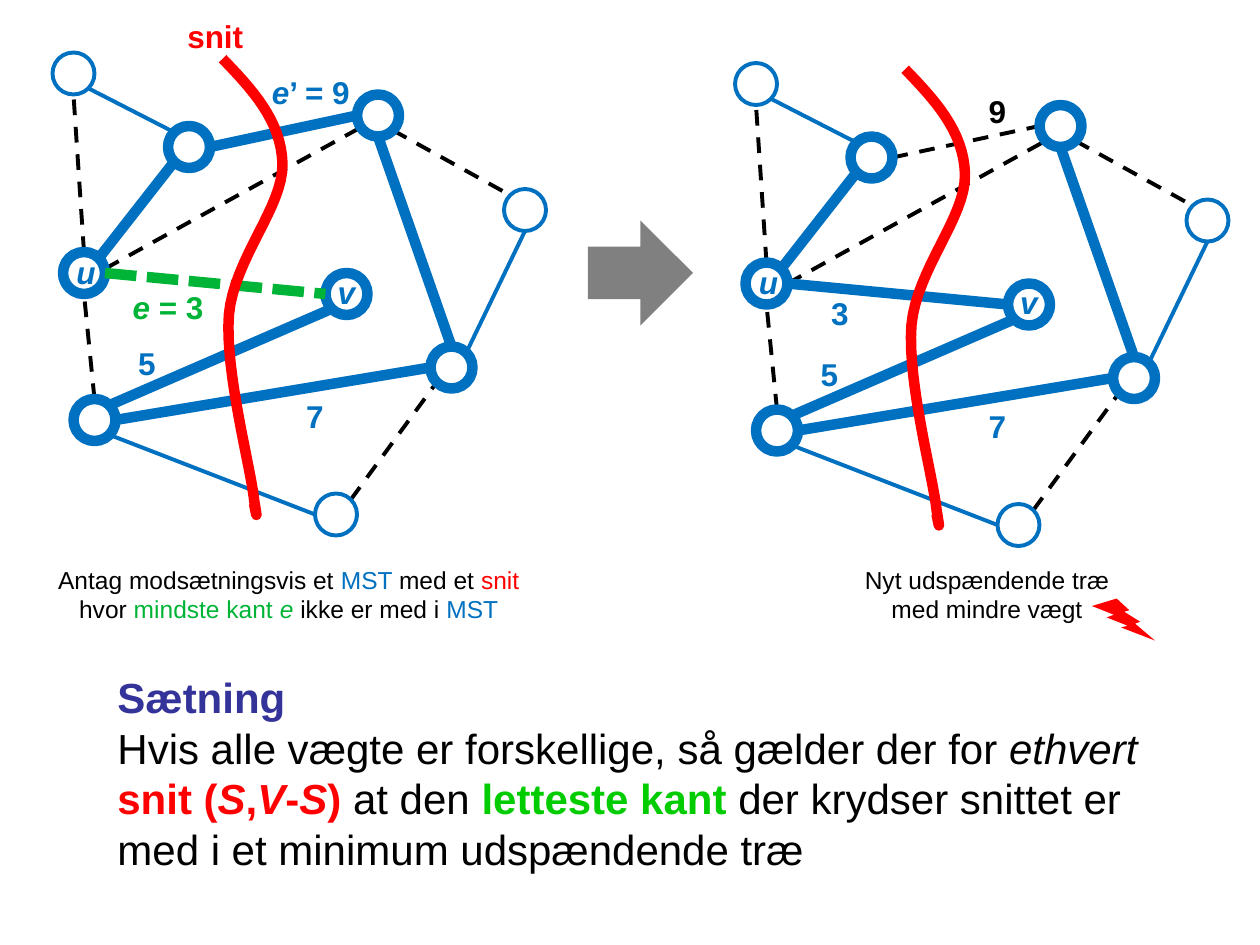
from dataclasses import dataclass
from typing import NamedTuple

from lxml import etree
from pptx import Presentation
from pptx import util as u
from pptx.dml.color import RGBColor
from pptx.enum import dml, shapes, text
from pptx.oxml import ns

PX = 7620  # EMU per px, 120 px to the inch
HUE = {"blue": "0070C0", "black": "000000", "red": "FF0000", "green": "00B438",
       "lime": "00CC00", "navy": "333399", "gray": "808080"}
THICK, THIN, RAD = 6, 2.25, 20
DASH, SHORT = dml.MSO_LINE.DASH, dml.MSO_LINE.SQUARE_DOT
SIDE = {"n": (0, -20), "ne": (14, -14), "e": (20, 0), "se": (14, 14),
        "s": (0, 20), "sw": (-14, 14), "w": (-20, 0), "nw": (-14, -14)}


class Run(NamedTuple):
    txt: str
    hue: str = "black"
    bold: bool = False
    ital: bool = False


class Node(NamedTuple):
    x: int
    y: int
    wide: float = THICK


@dataclass
class Edge:
    tail: str
    out: str
    head: str
    into: str
    hue: str = "blue"
    wide: float = THICK
    dash: object = None
    lift: int = 0


@dataclass
class Label:
    x: int
    y: int
    w: int
    h: int
    paras: list[list[Run]]
    size: int = 18
    mid: bool = True


@dataclass
class Graph:
    dx: int
    dy: int
    edges: list[Edge]
    marks: list[Label]


def dot(tail: str, out: str, head: str, into: str, lift: int = 0) -> Edge:
    return Edge(tail, out, head, into, "black", THIN, DASH, lift)


def mark(x: int, y: int, *runs: Run, w: int = 60) -> Label:
    return Label(x, y, w, 48, [list(runs)])


def bold(txt: str, hue: str = "blue", ital: bool = False) -> Run:
    return Run(txt, hue, True, ital)


NODES = {"a": Node(70, 70, THIN), "b": Node(180, 140), "t": Node(360, 110),
         "r": Node(500, 200, THIN), "u": Node(80, 260), "v": Node(330, 280),
         "x": Node(430, 350), "w": Node(90, 400), "s": Node(320, 490, THIN)}
EDGES = [
    dot("s", "ne", "x", "sw"), dot("u", "n", "a", "s"),
    dot("w", "n", "u", "s"), dot("t", "se", "r", "nw"),
    Edge("b", "sw", "u", "ne"), Edge("t", "s", "x", "n"),
    Edge("x", "w", "w", "e"), Edge("w", "ne", "v", "sw"),
    Edge("b", "nw", "a", "se", wide=THIN),
    Edge("x", "ne", "r", "s", wide=THIN),
    Edge("w", "se", "s", "w", wide=THIN)]
MARKS = [mark(110, 322, bold("5")), mark(270, 372, bold("7")),
         mark(52, 235, bold("u", ital=True)),
         mark(300, 254, bold("v", ital=True))]
CUT = [(212, 56), (240, 85), (268, 115), (269, 156), (270, 197), (223, 246),
       (218, 300), (214, 354), (239, 446), (242, 476), (247, 506), (242, 480),
       (242, 480)]
GRAPHS = [
    Graph(650, 10,
          [dot("u", "e", "t", "sw"), dot("b", "e", "t", "w"),
           Edge("u", "e", "v", "w")],
          [mark(270, 72, bold("9", "black")), mark(120, 264, bold("3"))]),
    Graph(0, 0,
          [dot("u", "e", "t", "sw", lift=4), Edge("b", "e", "t", "w"),
           Edge("u", "e", "v", "w", "green", dash=SHORT)],
          [mark(236, 64, bold("e", ital=True), bold("’ = 9"), w=120),
           mark(110, 268, bold("e", "green", True), bold(" = 3", "green"),
                w=100)])]
TEXTS = [
    Label(130, 10, 150, 48, [[bold("snit", "red")]]),
    Label(810, 532, 260, 68, [[Run("Nyt udspændende træ med mindre vægt")]], 14),
    Label(40, 532, 470, 68, [[
        Run("Antag modsætningsvis et "), Run("MST ", "blue"), Run("med et "),
        Run("snit", "red"), Run(" hvor "), Run("mindste kant ", "green"),
        Run("e", "green", ital=True), Run(" ikke er med i "),
        Run("MST", "blue")]], 14),
    Label(100, 634, 1050, 206, [
        [bold("Sætning", "navy")],
        [Run("Hvis alle vægte er forskellige, så gælder der for "),
         Run("ethvert ", ital=True), bold("snit (", "red"),
         bold("S", "red", True), bold(",", "red"), bold("V", "red", True),
         bold("-", "red"), bold("S", "red", True), bold(") ", "red"),
         Run("at den "), bold("letteste kant ", "lime"),
         Run("der krydser snittet er med i et minimum udspændende træ")]],
        24, False)]


def rgb(hue: str) -> RGBColor:
    return RGBColor.from_string(HUE[hue])


def ink(line, hue: str, wide: float, dash=None) -> None:
    line.color.rgb = rgb(hue)
    line.width = u.Pt(wide)
    if dash is not None:
        line.dash_style = dash


def write(page, lab: Label) -> None:
    box = page.add_textbox(*(n * PX for n in (lab.x, lab.y, lab.w, lab.h)))
    frame = box.text_frame
    frame.word_wrap = True
    for i, runs in enumerate(lab.paras):
        para = frame.add_paragraph() if i else frame.paragraphs[0]
        para.alignment = text.PP_ALIGN.CENTER if lab.mid else text.PP_ALIGN.LEFT
        for run in runs:
            bit = para.add_run()
            bit.text = run.txt
            font = bit.font
            font.name, font.size = "Arial", u.Pt(lab.size)
            font.bold, font.italic = run.bold, run.ital
            font.color.rgb = rgb(run.hue)


def link(page, edge: Edge, dx: int, dy: int) -> None:
    ends = []
    for name, side in ((edge.tail, edge.out), (edge.head, edge.into)):
        node, (sx, sy) = NODES[name], SIDE[side]
        ends += [(node.x + sx + dx) * PX, (node.y + sy + dy - edge.lift) * PX]
    line = page.add_connector(shapes.MSO_CONNECTOR.STRAIGHT, *ends)
    ink(line.line, edge.hue, edge.wide, edge.dash)
    etree.SubElement(line._element.spPr, ns.qn("a:effectLst"))


def ring(page, node: Node, dx: int, dy: int) -> None:
    disc = page.add_shape(shapes.MSO_SHAPE.OVAL, (node.x - RAD + dx) * PX,
                          (node.y - RAD + dy) * PX, 2 * RAD * PX, 2 * RAD * PX)
    disc.shadow.inherit = False
    disc.fill.background()
    ink(disc.line, "blue", node.wide)


def curve(pts: list, steps: int = 16) -> list:
    """Sample a chain of cubic Bézier segments."""
    out = [pts[0]]
    for i in range(0, len(pts) - 1, 3):
        for k in range(1, steps + 1):
            t = k / steps
            mix = ((1 - t) ** 3, 3 * t * (1 - t) ** 2, 3 * t * t * (1 - t), t ** 3)
            out.append(tuple(sum(m * p[j] for m, p in zip(mix, pts[i:i + 4]))
                             for j in (0, 1)))
    return out


def slash(page, dx: int, dy: int) -> None:
    """Draw the cut through a graph."""
    pts = [((x + dx) * PX, (y + dy) * PX) for x, y in curve(CUT)]
    pen = page.build_freeform(*pts[0])
    pen.add_line_segments(pts[1:], close=False)
    cut = pen.convert_to_shape()
    cut.shadow.inherit = False
    cut.fill.background()
    ink(cut.line, "red", THICK)


def draw(page, graph: Graph) -> None:
    at = graph.dx, graph.dy
    edges = graph.edges + EDGES
    for edge in edges:
        if edge.dash == DASH:
            link(page, edge, *at)
    for node in NODES.values():
        ring(page, node, *at)
    for edge in edges:
        if edge.dash != DASH:
            link(page, edge, *at)
    slash(page, *at)
    for lab in graph.marks + MARKS:
        write(page, Label(lab.x + at[0], lab.y + at[1], lab.w, lab.h, lab.paras))


def block(page, kind, hue: str, *rect: int) -> None:
    item = page.add_shape(kind, *(n * PX for n in rect))
    item.shadow.inherit = False
    item.fill.solid()
    item.fill.fore_color.rgb = rgb(hue)
    item.line.fill.background()


def main() -> None:
    deck = Presentation()
    deck.slide_width, deck.slide_height = 1200 * PX, 900 * PX
    page = deck.slides.add_slide(deck.slide_layouts[6]).shapes
    for graph in GRAPHS:
        draw(page, graph)
    block(page, shapes.MSO_SHAPE.RIGHT_ARROW, "gray", 560, 210, 100, 100)
    for lab in TEXTS:
        write(page, lab)
    block(page, shapes.MSO_SHAPE.LIGHTNING_BOLT, "red", 1040, 570, 60, 40)
    deck.save("out.pptx")


if __name__ == "__main__":
    main()
